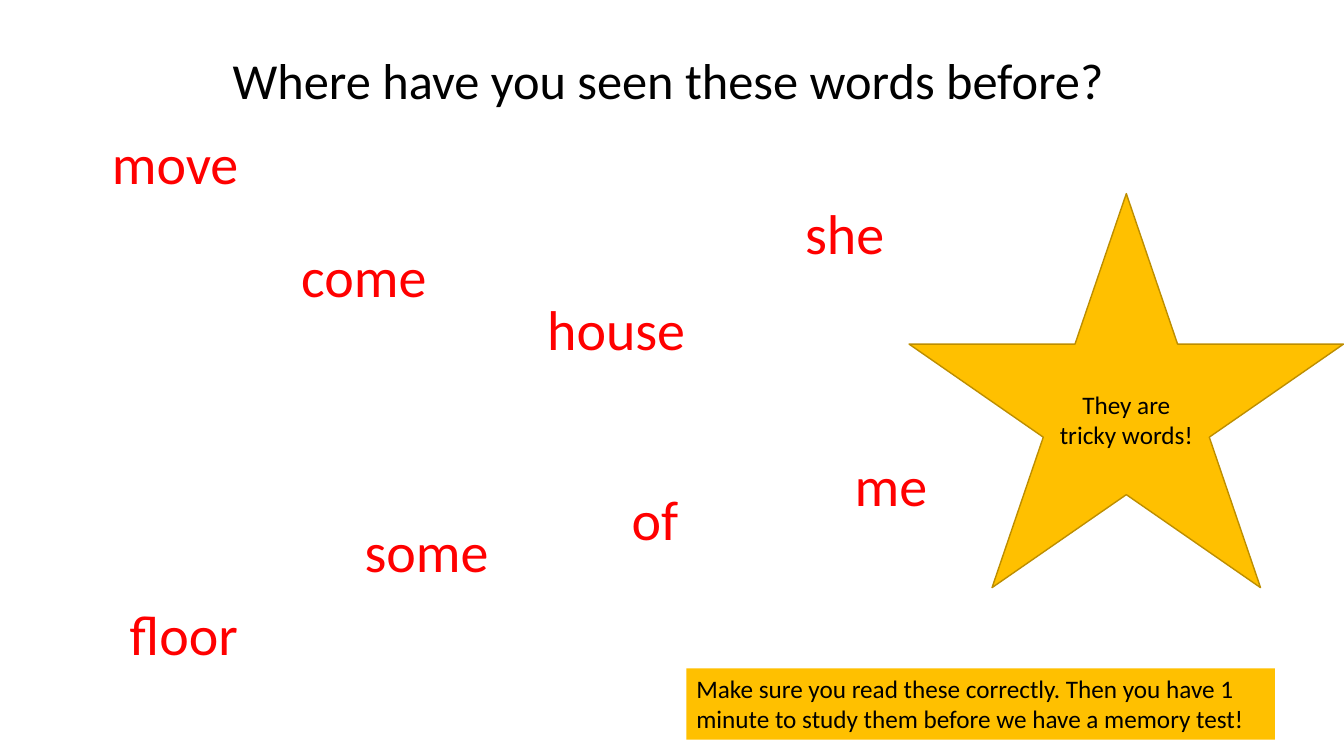
import pptx
import pptx.util
import pptx.dml.color
import pptx.enum.shapes
import pptx.enum.text

Cm = pptx.util.Cm
Shape = pptx.enum.shapes.MSO_SHAPE
Align = pptx.enum.text.PP_ALIGN
Anchor = pptx.enum.text.MSO_ANCHOR
Fit = pptx.enum.text.MSO_AUTO_SIZE

GOLD = "FFC000"
EDGE = "BD8E00"
RED = "FF0000"
BLACK = "000000"

# Word, left, top and width in cm, from the corner of the word area
WORDS = [
    ("come", 7.34, 5.97, 3.71),
    ("some", 8.94, 12.9, 3.66),
    ("house", 13.54, 7.29, 4.04),
    ("of", 15.67, 12.09, 1.7),
    ("she", 20.04, 4.88, 2.51),
    ("me", 21.29, 11.23, 2.36),
    ("move", 2.57, 3.12, 3.73),
    ("floor", 3.02, 14.99, 3.28),
]
WORD_HIGH = 1.96


def tint(color, code):
    color.rgb = pptx.dml.color.RGBColor.from_string(code)


def write(shape, text, size, code, align=Align.LEFT, wrap=True):
    frame = shape.text_frame
    frame.text = text
    frame.word_wrap = wrap
    para = frame.paragraphs[0]
    para.alignment = align
    para.font.name = "Calibri"
    para.font.size = pptx.util.Pt(size)
    tint(para.font.color, code)
    return frame


def add_title(slide, left, top, wide, high):
    title = slide.shapes.title
    title.left, title.top = Cm(left), Cm(top)
    title.width, title.height = Cm(wide), Cm(high)
    frame = write(title, "Where have you seen these words before?", 36, BLACK, wrap=False)
    frame.vertical_anchor = Anchor.TOP
    frame.auto_size = Fit.SHAPE_TO_FIT_TEXT


def add_words(slide, left, top):
    for word, x, y, wide in WORDS:
        box = slide.shapes.add_textbox(Cm(left + x), Cm(top + y), Cm(wide), Cm(WORD_HIGH))
        frame = write(box, word, 40, RED, wrap=False)
        frame.auto_size = Fit.SHAPE_TO_FIT_TEXT


def add_gold(slide, kind, left, top, wide, high):
    shape = slide.shapes.add_shape(kind, Cm(left), Cm(top), Cm(wide), Cm(high))
    shape.shadow.inherit = False
    shape.fill.solid()
    tint(shape.fill.fore_color, GOLD)
    return shape


def add_star(slide, left, top, wide, high):
    star = add_gold(slide, Shape.STAR_5_POINT, left, top, wide, high)
    tint(star.line.color, EDGE)
    star.line.width = pptx.util.Pt(1)
    frame = write(star, "They are tricky words!", 18, BLACK, Align.CENTER)
    frame.vertical_anchor = Anchor.MIDDLE


def add_note(slide, left, top, wide, high):
    note = add_gold(slide, Shape.RECTANGLE, left, top, wide, high)
    note.line.fill.background()
    text = ("Make sure you read these correctly. Then you have 1 minute "
            "to study them before we have a memory test!")
    frame = write(note, text, 18, BLACK)
    frame.vertical_anchor = Anchor.TOP
    frame.auto_size = Fit.SHAPE_TO_FIT_TEXT


def main():
    deck = pptx.Presentation()
    deck.slide_width, deck.slide_height = Cm(33.87), Cm(19.05)
    slide = deck.slides.add_slide(deck.slide_layouts.get_by_name("Title Only"))
    add_title(slide, 5.61, 1.12, 22.66, 1.8)
    add_words(slide, 0, 0)
    add_star(slide, 22.91, 4.88, 10.95, 9.93)
    add_note(slide, 17.3, 16.84, 14.83, 1.8)
    deck.save("out.pptx")


if __name__ == "__main__":
    main()
